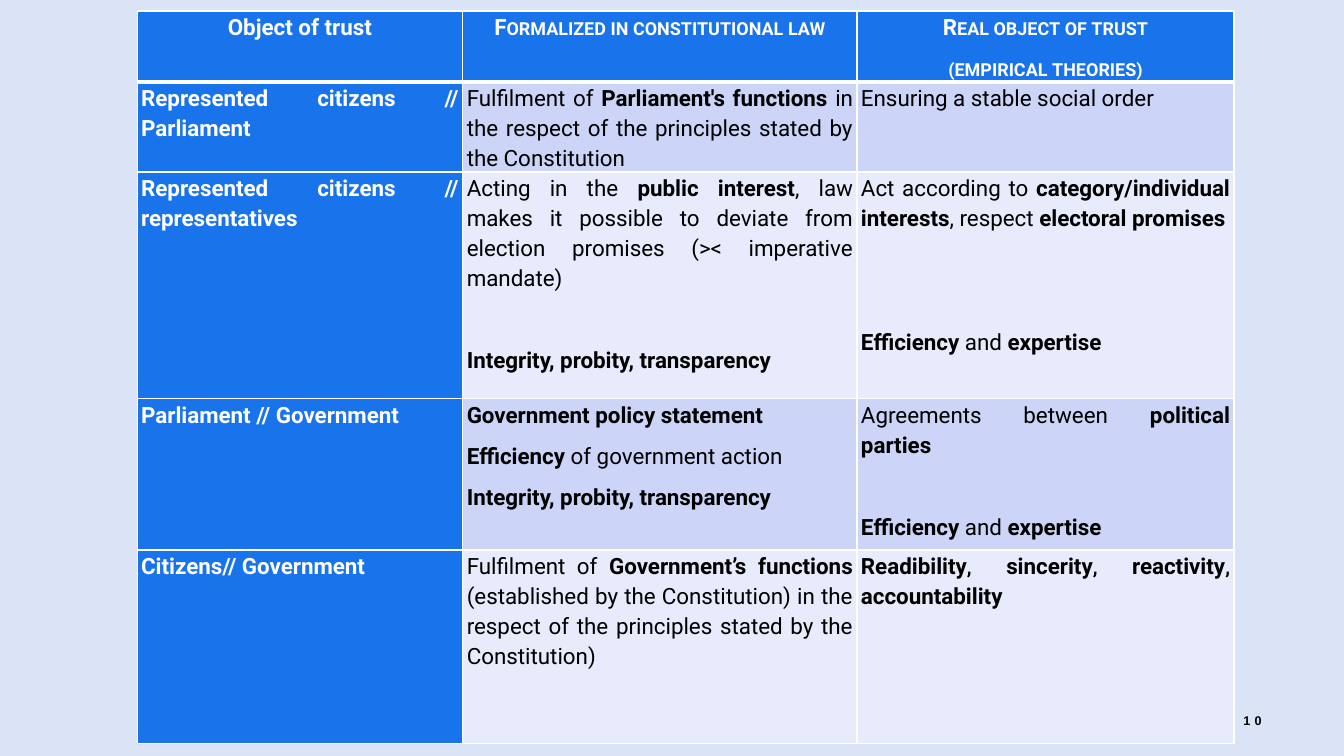
"""Build a slide with a table of the objects of trust."""
from lxml import etree
from pptx import Presentation
from pptx.dml.color import RGBColor
from pptx.enum.text import MSO_ANCHOR, PP_ALIGN
from pptx.oxml.ns import qn
from pptx.util import Inches, Pt

MID, JUST, RIGHT = PP_ALIGN.CENTER, PP_ALIGN.JUSTIFY, PP_ALIGN.RIGHT
CENTER = MSO_ANCHOR.MIDDLE
BACK = RGBColor(0xDB, 0xE4, 0xF7)
BLUE = RGBColor(0x19, 0x73, 0xEB)
DARK = RGBColor(0xCC, 0xD5, 0xF7)
PALE = RGBColor(0xE8, 0xEB, 0xFB)
WHITE = RGBColor(0xFF, 0xFF, 0xFF)
BLACK = RGBColor(0, 0, 0)
WIDE, HIGH = 13.33, 7.5
COLS = (3.23, 3.91, 3.74)
ROWS = (0.69, 0.88, 2.25, 1.5, 1.92)
GAP = 29.5


def write(para, text, size=16, font="Roboto", color=BLACK, align=JUST,
          line=1.15, after=8, before=0, plain=(16, False), caps=False, track=0):
    """Fill a paragraph; parts between asterisks are bold."""
    para.alignment, para.line_spacing = align, line
    para.space_before, para.space_after = Pt(before), Pt(after)
    for n, part in enumerate(text.split("*")):
        if not part:
            continue
        run = para.add_run()
        run.text = part
        face = run.font
        face.name, face.color.rgb = font, color
        points, face.bold = (size, True) if n % 2 else plain
        face.size = Pt(points)
        if caps:
            face._element.set("cap", "small")
        if track:
            face._element.set("spc", str(track * 100))


def edge(cell, top, base):
    """Draw the four white borders of a cell."""
    props = cell._tc.get_or_add_tcPr()
    for side, width in zip("LRTB", (1, 1, top, base)):
        line = etree.SubElement(props, qn("a:ln" + side), w=str(Pt(width)))
        fill = etree.SubElement(line, qn("a:solidFill"))
        etree.SubElement(fill, qn("a:srgbClr"), val=str(WHITE))


HEAD = {"color": WHITE, "align": MID}
SMALL = {**HEAD, "caps": True}
SIDE = {"color": WHITE}
BODY = {}
ONE, TWO = {"before": GAP}, {"before": 2 * GAP}
LIST = {"plain": (14, True)}
CLEAN = "*Integrity, probity, transparency*"
SKILL = "*Efficiency* and *expertise*"

CELLS = [
    [[("*Object of trust*", HEAD)],
     [("*Formalized in constitutional law*", SMALL)],
     [("*Real object of trust*", SMALL), ("*(empirical theories)*", SMALL)]],
    [[("*Represented citizens // Parliament*", SIDE)],
     [("Fulfilment of *Parliament's functions *in the respect of the "
       "principles stated by the Constitution", BODY)],
     [("Ensuring a stable social order", BODY)]],
    [[("*Represented citizens // representatives*", SIDE)],
     [("Acting in the *public interest*, law makes it possible to deviate "
       "from election promises (>< imperative mandate)", BODY), (CLEAN, ONE)],
     [("Act according to *category/individual interests*, respect "
       "*electoral promises*", BODY), (SKILL, TWO)]],
    [[("*Parliament // Government*", SIDE)],
     [("*Government policy statement*", BODY),
      ("*Efficiency* of government action", BODY), (CLEAN, BODY)],
     [("Agreements between *political parties*", BODY), (SKILL, ONE)]],
    [[("*Citizens// Government*", SIDE)],
     [("Fulfilment of *Government’s functions *(established by the "
       "Constitution) in the respect of the principles stated by the "
       "Constitution)", BODY)],
     [("*Readibility*, *sincerity*, *reactivity*, *accountability*", LIST)]],
]

deck = Presentation()
deck.slide_width, deck.slide_height = Inches(WIDE), Inches(HIGH)
slide = deck.slides.add_slide(deck.slide_layouts[6])
slide.background.fill.solid()
slide.background.fill.fore_color.rgb = BACK

grid = slide.shapes.add_table(
    len(ROWS), len(COLS), Inches(1.36), Inches(0.11),
    Inches(sum(COLS)), Inches(sum(ROWS))).table
grid.first_row = grid.horz_banding = False
for col, width in zip(grid.columns, COLS):
    col.width = Inches(width)
for row, height in zip(grid.rows, ROWS):
    row.height = Inches(height)

for r, row in enumerate(CELLS):
    for c, paras in enumerate(row):
        cell = grid.cell(r, c)
        cell.margin_left = cell.margin_right = Inches(0.04)
        cell.margin_top = cell.margin_bottom = 0
        edge(cell, 3 if r == 1 else 1, 3 if r == 0 else 1)
        cell.fill.solid()
        cell.fill.fore_color.rgb = (
            BLUE if r == 0 or c == 0 else DARK if r % 2 else PALE)
        frame = cell.text_frame
        for n, (text, form) in enumerate(paras):
            para = frame.add_paragraph() if n else frame.paragraphs[0]
            write(para, text, **form)

page = slide.shapes.add_textbox(
    Inches(11.82), Inches(6.95), Inches(0.79), Inches(0.4)).text_frame
page.word_wrap, page.vertical_anchor = True, CENTER
write(page.paragraphs[0], "*10*", size=9, font="Arial", align=RIGHT,
      line=1.0, after=0, track=3)

deck.save("out.pptx")
